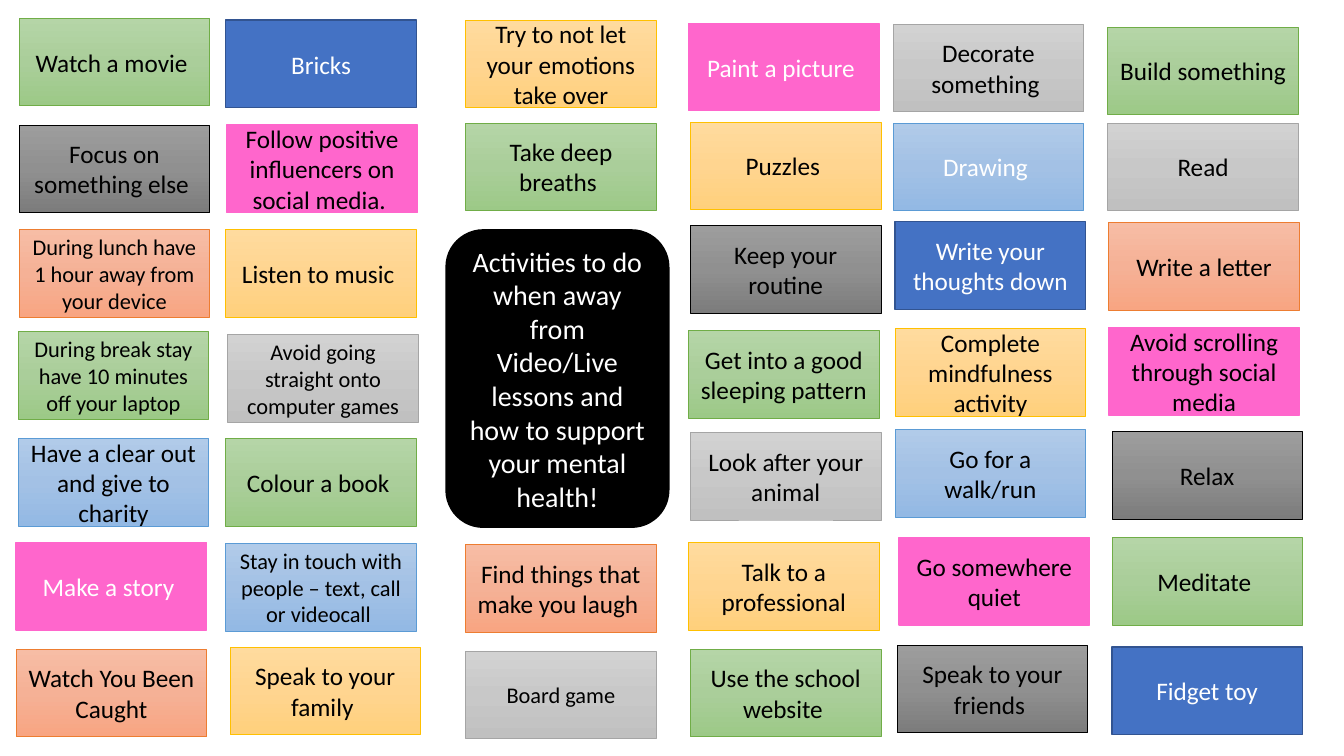
"""Build a one-slide wall of wellbeing activities around a central title."""
import copy

import pptx
import pptx.enum.shapes
import pptx.enum.text
import pptx.util
from pptx.dml.color import RGBColor
from pptx.oxml.ns import qn
from pptx.util import Pt

THEME = {
    "font": "Calibri",
    "sizes": {"small": 16, "normal": 18, "title": 20},
    "text": {"dark": "000000", "light": "FFFFFF"},
    "styles": {
        "green": (["B5D5A7", "AACE9A", "9CC987"], "70AD47", 0.5),
        "orange": (["F7BDA5", "F5B196", "F8A582"], "ED7D31", 0.5),
        "gold": (["FFDB9E", "FFD590", "FFD07C"], "FFC000", 0.5),
        "sky": (["B1CBE9", "A3C1E5", "93B9E4"], "5B9BD5", 0.5),
        "silver": (["D2D2D2", "C8C8C8", "C0C0C0"], "A5A5A5", 0.5),
        "charcoal": (["9D9D9D", "909090", "7C7C7C"], "000000", 0.5),
        "pink": (["FF66CC"], "FF66CC", 1),
        "blue": (["4472C4"], "325491", 1),
        "black": (["000000"], "000000", 1),
    },
}
TILE_WIDTH, TILE_HEIGHT = 136.1, 62.6

TILES = [
    (13.7, 13, "green", "dark", "normal", "Watch a movie "),
    (13.7, 89.3, "charcoal", "dark", "normal", "Focus on something else "),
    (13.7, 164.2, "orange", "dark", "small", "During lunch have 1 hour away from your device"),
    (13, 236.9, "green", "dark", "small", "During break stay have 10 minutes off your laptop"),
    (13, 313.2, "sky", "dark", "normal", "Have a clear out and give to charity"),
    (11.5, 387.4, "pink", "light", "normal", "Make a story "),
    (11.5, 463.7, "orange", "dark", "normal", "Watch You Been Caught"),

    (161.3, 14.4, "blue", "light", "normal", "Bricks"),
    (162, 89.3, "pink", "dark", "normal", "Follow positive influencers on social media. "),
    (161.3, 164.2, "gold", "dark", "normal", "Listen to music "),
    (162.7, 239, "silver", "dark", "small", "Avoid going straight onto computer games"),
    (161.3, 313.2, "green", "dark", "normal", "Colour a book "),
    (161.3, 388.1, "sky", "dark", "small", "Stay in touch with people – text, call or videocall "),
    (164.2, 462.2, "gold", "dark", "normal", "Speak to your family "),

    (332.6, 14.4, "gold", "dark", "normal", "Try to not let your emotions take over"),
    (332.6, 87.8, "green", "dark", "normal", "Take deep breaths "),
    (332.6, 388.8, "orange", "dark", "normal", "Find things that make you laugh "),
    (332.6, 465.1, "silver", "dark", "small", "Board game"),

    (491.8, 16.6, "pink", "light", "normal", "Paint a picture "),
    (493.2, 87.1, "gold", "dark", "normal", "Puzzles "),
    (493.2, 161.3, "charcoal", "dark", "normal", "Keep your routine"),
    (491.8, 236.2, "green", "dark", "normal", "Get into a good sleeping pattern "),
    (493.2, 308.9, "silver", "dark", "normal", "Look after your animal"),
    (491.8, 387.4, "gold", "dark", "normal", "Talk to a professional"),
    (493.2, 463.7, "green", "dark", "normal", "Use the school website "),

    (637.9, 17.3, "silver", "dark", "normal", "Decorate something "),
    (637.9, 87.8, "sky", "light", "normal", "Drawing "),
    (639.4, 158.4, "blue", "light", "normal", "Write your thoughts down"),
    (639.4, 234.7, "gold", "dark", "normal", "Complete mindfulness activity"),
    (639.4, 306.7, "sky", "dark", "normal", "Go for a walk/run"),
    (642.2, 383.8, "pink", "dark", "normal", "Go somewhere quiet"),
    (640.8, 460.8, "charcoal", "dark", "normal", "Speak to your friends "),

    (791.3, 19.4, "green", "dark", "normal", "Build something"),
    (791.3, 87.8, "silver", "dark", "normal", "Read"),
    (792, 159.1, "orange", "dark", "normal", "Write a letter"),
    (792, 234, "pink", "dark", "normal", "Avoid scrolling through social media"),
    (794.2, 308.2, "charcoal", "dark", "normal", "Relax"),
    (794.2, 383.8, "green", "dark", "normal", "Meditate "),
    (794.2, 462.2, "blue", "light", "normal", "Fidget toy"),
]
TITLE = "Activities to do when away from Video/Live lessons and how to support your mental health!"


def paint(box, style):
    """Apply a theme style's fill and outline to a box."""
    colours, outline, weight = THEME["styles"][style]
    if len(colours) == 1:
        box.fill.solid()
        box.fill.fore_color.rgb = RGBColor.from_string(colours[0])
    else:
        box.fill.gradient()
        box.fill.gradient_angle = 270
        stop_list = box._element.spPr.find(".//" + qn("a:gsLst"))
        stop_list.insert(1, copy.deepcopy(stop_list[0]))
        for stop, position, colour in zip(box.fill.gradient_stops, (0, 0.5, 1), colours):
            stop.position = position
            stop.color.rgb = RGBColor.from_string(colour)
    box.line.color.rgb = RGBColor.from_string(outline)
    box.line.width = Pt(weight)
    box.shadow.inherit = False


def add_box(page, kind, frame, style, ink, size, text):
    """Add one painted box with centred text."""
    box = page.shapes.add_shape(kind, *(Pt(length) for length in frame))
    paint(box, style)
    box.text_frame.word_wrap = True
    box.text_frame.vertical_anchor = pptx.enum.text.MSO_ANCHOR.MIDDLE
    para = box.text_frame.paragraphs[0]
    para.text = text
    para.alignment = pptx.enum.text.PP_ALIGN.CENTER
    span = para.runs[0]
    span.font.name = THEME["font"]
    span.font.size = Pt(THEME["sizes"][size])
    span.font.color.rgb = RGBColor.from_string(THEME["text"][ink])


deck = pptx.Presentation()
deck.slide_width, deck.slide_height = Pt(960), Pt(540)
page = deck.slides.add_slide(deck.slide_layouts[6])

for left, top, style, ink, size, text in TILES:
    frame = (left, top, TILE_WIDTH, TILE_HEIGHT)
    add_box(page, pptx.enum.shapes.MSO_SHAPE.RECTANGLE, frame, style, ink, size, text)

title_frame = (318.6, 164.2, 159.1, 212.4)
add_box(page, pptx.enum.shapes.MSO_SHAPE.ROUNDED_RECTANGLE, title_frame, "black", "light", "title", TITLE)

deck.save("out.pptx")
